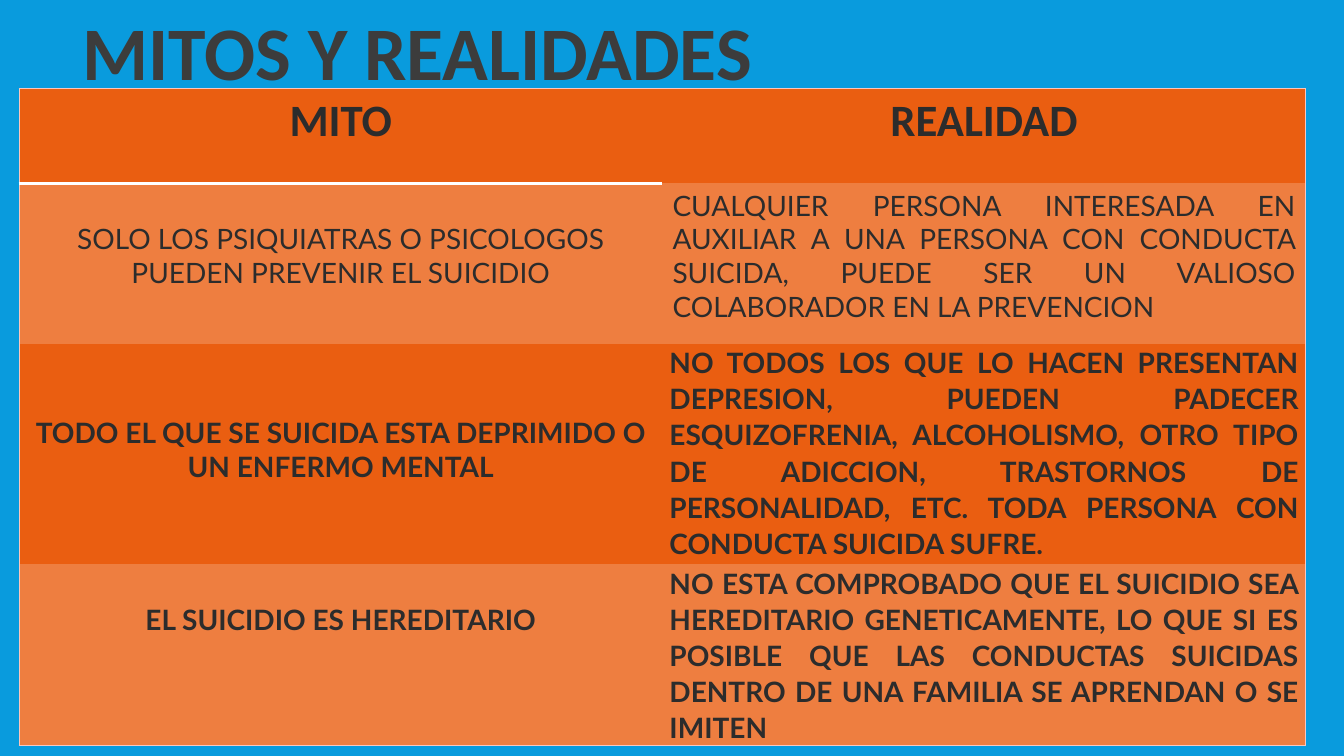
"""Build the slide that compares myths and realities about suicide."""
import pptx
import pptx.dml.color
import pptx.enum.text
import pptx.oxml
import pptx.oxml.ns
import pptx.util
from pptx.util import Inches, Pt

TITLE = "MITOS Y REALIDADES"
HEADERS = ("MITO", "REALIDAD")
MYTHS = (
    "SOLO LOS PSIQUIATRAS O PSICOLOGOS PUEDEN PREVENIR EL SUICIDIO",
    "TODO EL QUE SE SUICIDA ESTA DEPRIMIDO O UN ENFERMO MENTAL",
    "EL SUICIDIO ES HEREDITARIO",
)
REALITIES = (
    "CUALQUIER PERSONA INTERESADA EN AUXILIAR A UNA PERSONA CON CONDUCTA SUICIDA, "
    "PUEDE SER UN VALIOSO COLABORADOR EN LA PREVENCION",
    "NO TODOS LOS QUE LO HACEN PRESENTAN DEPRESION, PUEDEN PADECER ESQUIZOFRENIA, "
    "ALCOHOLISMO, OTRO TIPO DE ADICCION, TRASTORNOS DE PERSONALIDAD, ETC. "
    "TODA PERSONA CON CONDUCTA SUICIDA SUFRE.",
    "NO ESTA COMPROBADO QUE EL SUICIDIO SEA HEREDITARIO GENETICAMENTE, LO QUE SI ES "
    "POSIBLE QUE LAS CONDUCTAS SUICIDAS DENTRO DE UNA FAMILIA SE APRENDAN O SE IMITEN",
)
MYTH_TOP_MARGINS = (0.38, 0.72, 0.38)
ROW_HEIGHTS = (0.94, 1.59, 2.19, 1.79)
COLUMN_WIDTH = 6.38
BACKGROUND, TITLE_COLOR, TEXT_COLOR = "099BDD", "3C3C3C", "2C2C2C"
ROW_COLORS = ("EA5E11", "EE7E40")
FRAME, HEADER_RULE = ("FAC6BD", 0.75), ("FFFFFF", 2)
CENTER = pptx.enum.text.PP_ALIGN.CENTER
JUSTIFY = pptx.enum.text.PP_ALIGN.JUSTIFY


def color(value):
    return pptx.dml.color.RGBColor.from_string(value)


def paint(fill, value):
    fill.solid()
    fill.fore_color.rgb = color(value)


def line_element(tag, line):
    width = Pt(line[1]) if line else 0
    fill = f'<a:solidFill><a:srgbClr val="{line[0]}"/></a:solidFill>' if line else "<a:noFill/>"
    namespace = pptx.oxml.ns.nsdecls("a")
    return pptx.oxml.parse_xml(f'<a:{tag} {namespace} w="{width}">{fill}</a:{tag}>')


def write(text_frame, text, size, font_name, bold, alignment, text_color=TEXT_COLOR):
    text_frame.text = text
    paragraph = text_frame.paragraphs[0]
    paragraph.alignment = alignment
    run = paragraph.runs[0]
    run.font.size, run.font.name, run.font.bold = Pt(size), font_name, bold
    run.font.color.rgb = color(text_color)
    return paragraph


def style_cell(cell, row, column):
    last_row = len(ROW_HEIGHTS) - 1
    borders = {
        "lnL": FRAME if column == 0 else None,
        "lnR": FRAME if column == 1 else None,
        "lnT": FRAME if row == 0 else None,
        "lnB": FRAME if row == last_row else None,
    }
    if column == 0 and row == 0:
        borders["lnB"] = HEADER_RULE
    if column == 0 and row == 1:
        borders["lnT"] = HEADER_RULE
    properties = cell._tc.get_or_add_tcPr()
    for tag, line in borders.items():
        properties.append(line_element(tag, line))
    paint(cell.fill, ROW_COLORS[row % 2])


def fill_cell(cell, row, column):
    if row == 0:
        write(cell.text_frame, HEADERS[column], 32, "Calibri", True, CENTER)
    elif column == 0:
        cell.margin_top = Inches(MYTH_TOP_MARGINS[row - 1])
        write(cell.text_frame, MYTHS[row - 1], 20, "Lato", row > 1, CENTER)
    else:
        paragraph = write(cell.text_frame, REALITIES[row - 1], 20, "Lato", row > 1, JUSTIFY)
        if row > 1:
            paragraph.line_spacing = 1.07
            cell.margin_left = cell.margin_right = Inches(0.07)
            cell.margin_top = cell.margin_bottom = 0


def add_comparison(slide):
    frame = slide.shapes.add_table(
        len(ROW_HEIGHTS), 2, Inches(0.19), Inches(0.88),
        Inches(2 * COLUMN_WIDTH), Inches(sum(ROW_HEIGHTS)))
    table = frame.table
    table.horz_banding = False
    for column in table.columns:
        column.width = Inches(COLUMN_WIDTH)
    for row, height in enumerate(ROW_HEIGHTS):
        table.rows[row].height = Inches(height)
        for column in range(2):
            cell = table.cell(row, column)
            style_cell(cell, row, column)
            fill_cell(cell, row, column)


def add_title(slide):
    box = slide.shapes.add_textbox(Inches(0.35), 0, Inches(7.58), Inches(1.01))
    box.text_frame.word_wrap = False
    paragraph = write(box.text_frame, TITLE, 54, "Calibri", True, CENTER, TITLE_COLOR)
    run_properties = paragraph.runs[0]._r.get_or_add_rPr()
    run_properties.insert(0, line_element("ln", (TEXT_COLOR, 0.75)))


def main():
    presentation = pptx.Presentation()
    presentation.slide_width, presentation.slide_height = Inches(13.33), Inches(7.5)
    slide = presentation.slides.add_slide(presentation.slide_layouts[6])
    paint(slide.background.fill, BACKGROUND)
    add_comparison(slide)
    add_title(slide)
    presentation.save("out.pptx")


if __name__ == "__main__":
    main()
